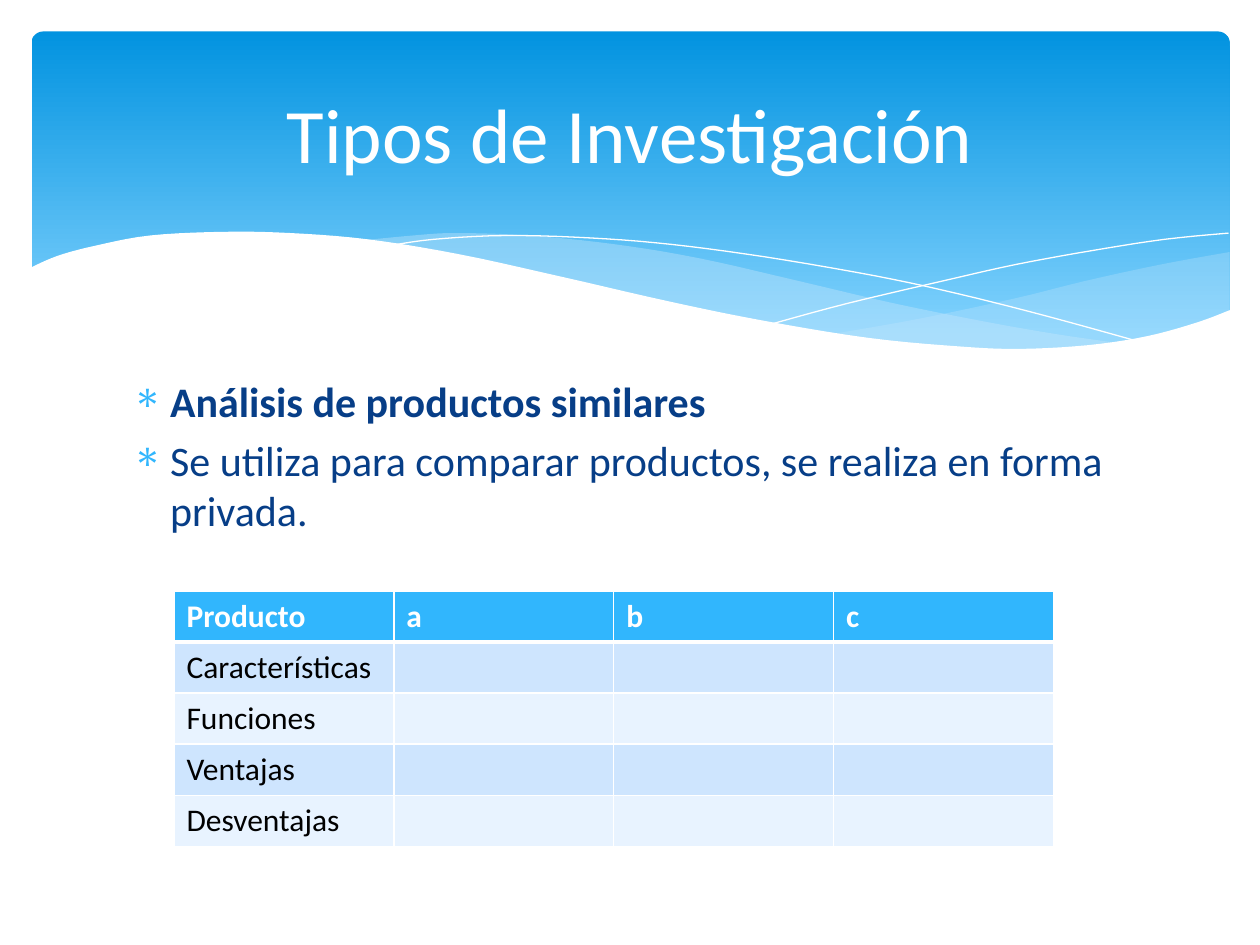
from dataclasses import dataclass

from lxml import etree
from pptx import Presentation
from pptx.dml.color import RGBColor
from pptx.enum.shapes import MSO_SHAPE
from pptx.enum.text import MSO_ANCHOR, MSO_AUTO_SIZE, PP_ALIGN
from pptx.oxml.ns import qn
from pptx.util import Pt

ROUNDED = MSO_SHAPE.ROUNDED_RECTANGLE
MIDDLE, TOP = MSO_ANCHOR.MIDDLE, MSO_ANCHOR.TOP
CENTER, LEFT = PP_ALIGN.CENTER, PP_ALIGN.LEFT
NO_AUTOFIT = MSO_AUTO_SIZE.NONE


@dataclass(frozen=True)
class Theme:
    """Colours, font and type sizes of the slide."""
    font: str = "Calibri"
    title_size: int = 44
    body_size: int = 24
    table_size: int = 18
    white: str = "FFFFFF"
    black: str = "000000"
    navy: str = "073E87"
    accent: str = "31B6FD"
    band_top: str = "0293E0"
    band_bottom: str = "83D3FE"
    swell: str = "C6E7FC"
    row_fills: tuple = ("CEE5FE", "E8F3FF")


THEME = Theme()

RIGHT_SWELL = (
    [(458, 172.8), (507, 164.2), (561.6, 152.6), (602, 142.6), (645, 133.2), (684.7, 126)],
    [(684.7, 159.8), (655, 170.6), (628, 176.4), (597, 180.7), (560, 182.2),
     (518, 180), (489.6, 177), (458, 172.8)],
)
LEFT_SWELL = (
    [(188, 119.5), (218, 116.6), (242, 115.2), (284.4, 116.6), (334, 121.7), (381.6, 129.6),
     (435, 141.8), (490.3, 154.8), (540, 164.9), (584.6, 172.8), (625, 178.6)],
    [(625, 178.6), (592.6, 181.4), (563, 182.2), (530, 181.4), (492.5, 177.8), (450, 172),
     (402.5, 163.4), (335.5, 149), (289.4, 137.5), (242.6, 128.2), (188, 119.5)],
)
FALLING_LINE = [(204.5, 122.4), (229.7, 118.8), (270.7, 116.6), (319.7, 118), (365.8, 121.7),
                (419.8, 128.9), (482.4, 139.7), (529.2, 149.8), (580.3, 162.7), (635, 177.8)]
RISING_LINE = [(423.4, 167), (465.8, 155.5), (520.6, 142.6), (562.3, 133.2), (605.5, 125.3),
               (647.3, 118.8), (684, 115.2)]
WHITE_WAVE = (
    [(-1.4, 135.4), (15, 128.2), (36.7, 122.4), (67.7, 116.6), (109.4, 114.5), (147.6, 115.2),
     (192.2, 118.8), (244.8, 127.4), (303.8, 140.4), (363, 154), (416.2, 164.9), (477.4, 175),
     (530, 180), (564.5, 181.4), (603.4, 179.3), (637.2, 174.2), (666, 166.3), (685.4, 159)],
    [(685.4, 219), (-1.4, 219)],
)
BULLETS = [("Análisis de productos similares", True),
           ("Se utiliza para comparar productos, se realiza en forma privada.", False)]
TABLE_ROWS = [["Producto", "a", "b", "c"]] + [
    [label, "", "", ""] for label in ("Características", "Funciones", "Ventajas", "Desventajas")]


def rgb(color):
    """Turn a hex string into a colour."""
    return RGBColor.from_string(color)


def place(shape, box):
    """Move and size a shape to a box given in points."""
    shape.left, shape.top, shape.width, shape.height = map(Pt, box)


def format_runs(paragraph, size, color, bold=False):
    """Give every run of a paragraph its font, size and colour."""
    for run in paragraph.runs:
        run.font.name, run.font.size, run.font.bold = THEME.font, Pt(size), bold
        run.font.color.rgb = rgb(color)


def smooth(points, steps=5):
    """Return points along a Catmull-Rom curve through the given points."""
    padded = [points[0], *points, points[-1]]
    curve = [points[0]]
    for a, b, c, d in zip(padded, padded[1:], padded[2:], padded[3:]):
        for step in range(1, steps + 1):
            t = step / steps
            curve.append(tuple(
                0.5 * (2 * q + (r - p) * t + (2 * p - 5 * q + 4 * r - s) * t ** 2
                       + (3 * q - p - 3 * r + s) * t ** 3)
                for p, q, r, s in zip(a, b, c, d)))
    return curve


def add_curve(slide, box, edges, closed):
    """Draw a freeform through smoothed edges, relative to the box."""
    left, top = box[:2]
    points = [(Pt(left + x), Pt(top + y)) for edge in edges
              for x, y in (smooth(edge) if len(edge) > 2 else edge)]
    builder = slide.shapes.build_freeform(*points[0])
    builder.add_line_segments(points[1:], close=closed)
    shape = builder.convert_to_shape()
    shape.shadow.inherit = False
    return shape


def add_wave(slide, box, edges, color, opacity=100):
    """Draw a filled wave, translucent when opacity is below 100."""
    wave = add_curve(slide, box, edges, True)
    wave.fill.solid()
    wave.fill.fore_color.rgb = rgb(color)
    wave.line.fill.background()
    if opacity < 100:
        fill_color = wave.element.spPr.find(qn("a:solidFill")).find(qn("a:srgbClr"))
        etree.SubElement(fill_color, qn("a:alpha"), val=str(opacity * 1000))


def add_hairline(slide, box, points):
    """Draw a thin white curve."""
    line = add_curve(slide, box, [points], False)
    line.fill.background()
    line.line.color.rgb = rgb(THEME.white)
    line.line.width = Pt(0)


def add_banner(slide, box):
    """Draw the gradient banner with its waves."""
    banner = slide.shapes.add_shape(ROUNDED, *map(Pt, box))
    banner.adjustments[0] = 0.034
    banner.shadow.inherit = False
    banner.line.fill.background()
    banner.fill.gradient()
    banner.fill.gradient_angle = 270
    stops = ((0, THEME.band_top), (0.9, THEME.band_bottom))
    for stop, (position, color) in zip(banner.fill.gradient_stops, stops):
        stop.position, stop.color.rgb = position, rgb(color)
    add_wave(slide, box, RIGHT_SWELL, THEME.swell, 29)
    add_wave(slide, box, LEFT_SWELL, THEME.swell, 40)
    for points in (FALLING_LINE, RISING_LINE):
        add_hairline(slide, box, points)
    add_wave(slide, box, WHITE_WAVE, THEME.white)


def prepare_placeholder(slide, shape, box, anchor):
    """Bring a placeholder to the front and fit it to its box."""
    slide.shapes.element.append(shape.element)
    place(shape, box)
    frame = shape.text_frame
    frame.word_wrap, frame.auto_size, frame.vertical_anchor = True, NO_AUTOFIT, anchor
    return frame


def fill_title(slide, box):
    """Write the title."""
    frame = prepare_placeholder(slide, slide.shapes.title, box, MIDDLE)
    frame.text = "Tipos de Investigación"
    frame.paragraphs[0].alignment = CENTER
    format_runs(frame.paragraphs[0], THEME.title_size, THEME.white)


def fill_body(slide, box):
    """Write the bulleted list."""
    frame = prepare_placeholder(slide, slide.placeholders[1], box, TOP)
    frame.text = "\n".join(text for text, _ in BULLETS)
    for index, (paragraph, (_, bold)) in enumerate(zip(frame.paragraphs, BULLETS)):
        properties = paragraph._p.get_or_add_pPr()
        properties.set("marL", str(Pt(21.6)))
        properties.set("indent", str(-Pt(21.6)))
        bullet_color = etree.SubElement(properties, qn("a:buClr"))
        etree.SubElement(bullet_color, qn("a:srgbClr"), val=THEME.accent)
        etree.SubElement(properties, qn("a:buFont"), typeface="Symbol")
        etree.SubElement(properties, qn("a:buChar"), char="∗")
        paragraph.alignment = LEFT
        paragraph.space_before = Pt(4.8 if index else 0)
        format_runs(paragraph, THEME.body_size, THEME.navy, bold)


def set_borders(cell, widths):
    """Draw white borders of the given widths around a cell."""
    properties = cell._tc.get_or_add_tcPr()
    for index, (side, width) in enumerate(widths.items()):
        line = etree.Element(qn(f"a:ln{side}"), w=str(Pt(width)))
        fill = etree.SubElement(line, qn("a:solidFill"))
        etree.SubElement(fill, qn("a:srgbClr"), val=THEME.white)
        properties.insert(index, line)


def add_comparison_table(slide, box):
    """Add the product table with equal columns and rows."""
    rows, columns = len(TABLE_ROWS), len(TABLE_ROWS[0])
    table = slide.shapes.add_table(rows, columns, *map(Pt, box)).table
    for row, texts in enumerate(TABLE_ROWS):
        header = row == 0
        for column, text in enumerate(texts):
            cell = table.cell(row, column)
            cell.text = text
            cell.fill.solid()
            cell.fill.fore_color.rgb = rgb(THEME.accent if header else THEME.row_fills[(row - 1) % 2])
            set_borders(cell, {"L": 1, "R": 1, "T": 3 if row == 1 else 1, "B": 3 if header else 1})
            format_runs(cell.text_frame.paragraphs[0], THEME.table_size,
                        THEME.white if header else THEME.black, header)


def main():
    """Build and save the slide."""
    presentation = Presentation()
    presentation.slide_width, presentation.slide_height = Pt(720), Pt(540)
    slide = presentation.slides.add_slide(presentation.slide_layouts[1])
    add_banner(slide, (18, 18, 684.7, 194.4))
    fill_body(slide, (68.4, 211, 583.2, 271.4))
    fill_title(slide, (36, 26.6, 648, 98.6))
    add_comparison_table(slide, (99.4, 337.7, 502.6, 146))
    presentation.save("out.pptx")


if __name__ == "__main__":
    main()
